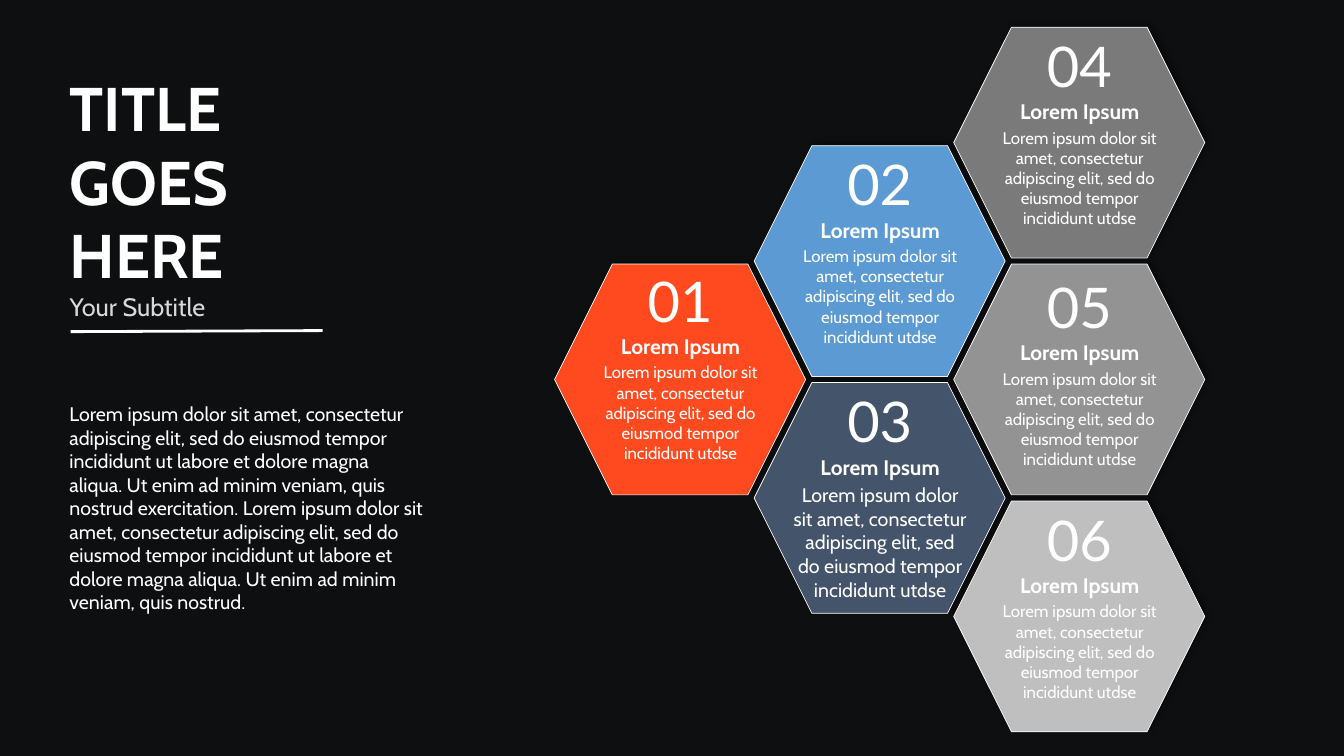
from lxml import etree
from pptx import Presentation
from pptx.dml.color import RGBColor
from pptx.enum.shapes import MSO_CONNECTOR, MSO_SHAPE
from pptx.enum.text import MSO_ANCHOR, MSO_AUTO_SIZE, PP_ALIGN
from pptx.oxml.ns import qn
from pptx.util import Inches, Pt

HEXAGON = MSO_SHAPE.HEXAGON
STRAIGHT = MSO_CONNECTOR.STRAIGHT
TOP, MIDDLE = MSO_ANCHOR.TOP, MSO_ANCHOR.MIDDLE
LEFT, CENTER = PP_ALIGN.LEFT, PP_ALIGN.CENTER
NO_FIT = MSO_AUTO_SIZE.NONE

BLACK = RGBColor(0x0E, 0x0F, 0x11)
WHITE = RGBColor(0xFF, 0xFF, 0xFF)
PALE = RGBColor(0xD9, 0xD9, 0xD9)
ORANGE = RGBColor(0xFE, 0x4A, 0x1E)
BLUE = RGBColor(0x5C, 0x9A, 0xD3)
NAVY = RGBColor(0x44, 0x54, 0x6B)
DARK_GRAY = RGBColor(0x7A, 0x7A, 0x7A)
GRAY = RGBColor(0x93, 0x93, 0x93)
LIGHT_GRAY = RGBColor(0xBF, 0xBF, 0xBF)

# Honeycomb measures, in percent of the slide's width or height
COMB_LEFT, COMB_TOP = 41.26, 3.6
COLUMN_STEP, ROW_STEP = 14.85, 15.67
CELL_WIDTH, CELL_HEIGHT = 18.68, 30.53

INTRO = (
    "Lorem ipsum dolor sit amet, consectetur adipiscing elit, sed do eiusmod tempor "
    "incididunt ut labore et dolore magna aliqua. Ut enim ad minim veniam, quis nostrud "
    "exercitation. Lorem ipsum dolor sit amet, consectetur adipiscing elit, sed do eiusmod "
    "tempor incididunt ut labore et dolore magna aliqua. Ut enim ad minim veniam, quis nostrud."
)
CELL_HEADING = "Lorem Ipsum"
CELL_TEXT = (
    "Lorem ipsum dolor sit amet, consectetur adipiscing elit, sed do eiusmod tempor "
    "incididunt utdse"
)

# number, column, row, fill, label shift, text size
CELLS = [
    ("01", 0, 2, ORANGE, -0.4, 12),
    ("02", 1, 1, BLUE, -0.13, 12),
    ("03", 1, 3, NAVY, -0.13, 14),
    ("04", 2, 0, DARK_GRAY, -0.13, 12),
    ("05", 2, 2, GRAY, 0.4, 12),
    ("06", 2, 4, LIGHT_GRAY, -0.13, 12),
]


class SlideBuilder:
    """Draws on one slide; every place is given in percent of its width and height."""

    def __init__(self, presentation):
        self.width = presentation.slide_width
        self.height = presentation.slide_height
        self.slide = presentation.slides.add_slide(presentation.slide_layouts[5])
        self.slide.background.fill.solid()
        self.slide.background.fill.fore_color.rgb = BLACK

    def place(self, left, top, width, height):
        return (int(self.width * left / 100), int(self.height * top / 100),
                int(self.width * width / 100), int(self.height * height / 100))

    def fill_text(self, shape, lines, align, anchor=TOP, gap=0):
        """Fill a shape with paragraphs given as (text, size, font, colour, bold)."""
        frame = shape.text_frame
        frame.word_wrap = True
        frame.auto_size = NO_FIT
        frame.vertical_anchor = anchor
        for index, (text, size, font, color, bold) in enumerate(lines):
            paragraph = frame.add_paragraph() if index else frame.paragraphs[0]
            paragraph.text = text
            paragraph.alignment = align
            paragraph.line_spacing = 1.0
            paragraph.space_before = Pt(gap if index else 0)
            paragraph.font.size = Pt(size)
            paragraph.font.name = font
            paragraph.font.bold = bold
            paragraph.font.color.rgb = color
        return frame

    def title(self, place, lines):
        title = self.slide.shapes.title
        title.left, title.top, title.width, title.height = self.place(*place)
        self.fill_text(title, lines, LEFT)

    def text(self, place, lines, align=LEFT, anchor=TOP, gap=0):
        box = self.slide.shapes.add_textbox(*self.place(*place))
        return self.fill_text(box, lines, align, anchor, gap)

    def rule(self, left, top, right, bottom):
        points = self.place(left, top, right, bottom)
        line = self.slide.shapes.add_connector(STRAIGHT, *points)
        line.line.color.rgb = WHITE
        line.line.width = Pt(2)
        etree.SubElement(line._element.spPr, qn("a:effectLst"))

    def hexagon(self, place, color):
        shape = self.slide.shapes.add_shape(HEXAGON, *self.place(*place))
        shape.fill.solid()
        shape.fill.fore_color.rgb = color
        shape.line.color.rgb = WHITE
        shape.line.width = Pt(0.5)
        shape.shadow.inherit = False
        effects = shape._element.spPr.find(qn("a:effectLst"))
        shadow = etree.SubElement(effects, qn("a:outerShdw"), blurRad=str(Pt(4)),
                                  dist=str(Pt(3)), dir=str(315 * 60000),
                                  algn="bl", rotWithShape="0")
        black = etree.SubElement(shadow, qn("a:srgbClr"), val="000000")
        etree.SubElement(black, qn("a:alpha"), val="40000")

    def cell(self, number, column, row, color, shift, text_size):
        """Draw one honeycomb cell with its number, heading and text."""
        left = COMB_LEFT + column * COLUMN_STEP
        top = COMB_TOP + row * ROW_STEP
        self.hexagon((left, top, CELL_WIDTH, CELL_HEIGHT), color)
        top += shift
        self.text((left + 3.83, top, 11.03, 10.27),
                  [(number, 40, "Lato", WHITE, False)], CENTER, MIDDLE)
        frame = self.text((left + 2.33, top + 9.2, 14.1, 18.27),
                          [(CELL_HEADING, 15, "Cabin", WHITE, True),
                           (CELL_TEXT, text_size, "Cabin", WHITE, False)],
                          CENTER, gap=text_size * 0.2)
        frame.margin_left = frame.margin_right = Inches(0.07)
        frame.margin_top = frame.margin_bottom = Inches(0.03)


def main():
    presentation = Presentation()
    presentation.slide_width = Inches(13.33)
    presentation.slide_height = Inches(7.5)
    builder = SlideBuilder(presentation)
    builder.title((4.43, 8.53, 24.23, 35.07),
                  [("TITLE GOES HERE", 44, "Cabin", WHITE, True),
                   ("Your Subtitle", 18, "Cabin", PALE, False)])
    builder.text((4.43, 52.53, 27.91, 29.6), [(INTRO, 14, "Cabin", WHITE, False)])
    builder.rule(5.25, 43.87, 24.01, 43.73)
    for cell in CELLS:
        builder.cell(*cell)
    presentation.save("out.pptx")


if __name__ == "__main__":
    main()
